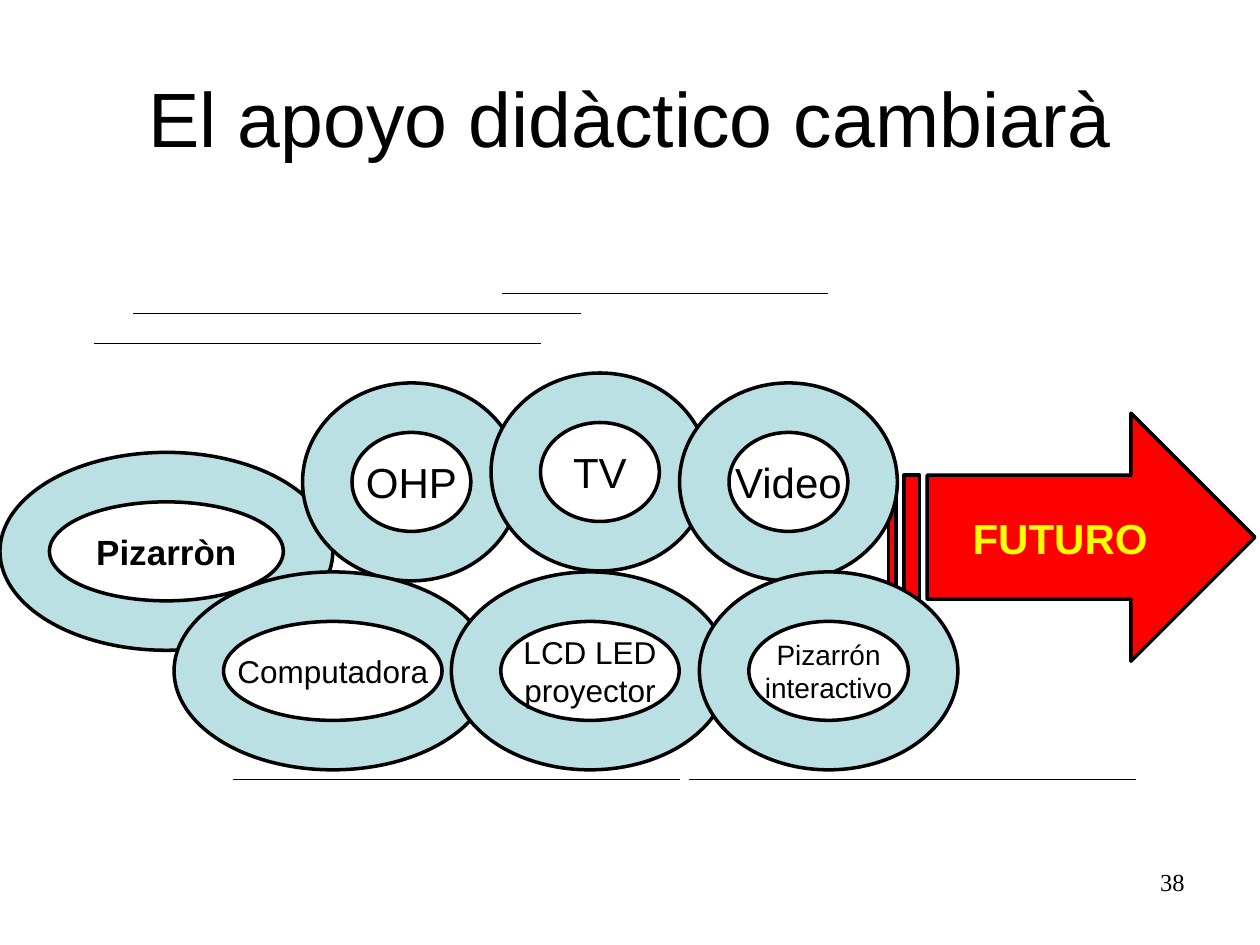
import pptx
import pptx.util
import pptx.dml.color
import pptx.enum.shapes
import pptx.enum.text
import pptx.oxml
import pptx.oxml.ns

Cm = pptx.util.Cm
Pt = pptx.util.Pt
SHAPES = pptx.enum.shapes.MSO_SHAPE
ALIGN = pptx.enum.text.PP_ALIGN
ANCHOR = pptx.enum.text.MSO_ANCHOR

COLORS = {"ink": "000000", "ring": "BBE0E3", "arrow": "FF0000", "future": "FFFF00"}


class Slide:
    """Holds the slide style and adds elements to one page; lengths in cm."""

    font = "Arial"
    outline = 2
    rule = 0.75

    def __init__(self, page):
        self.page = page

    def color(self, name):
        return pptx.dml.color.RGBColor.from_string(COLORS[name])

    def add_text(self, box, text, size, align=ALIGN.CENTER, anchor=ANCHOR.MIDDLE,
                 color="ink", bold=False, font=None):
        frame = box.text_frame
        frame.word_wrap = True
        frame.vertical_anchor = anchor
        para = frame.paragraphs[0]
        para.alignment = align
        span = para.add_run()
        span.text = text
        span.font.name = font or self.font
        span.font.size = Pt(size)
        span.font.bold = bold
        span.font.color.rgb = self.color(color)

    def title(self, text, left, top, width, height):
        box = self.page.shapes.title
        box.left, box.top, box.width, box.height = map(Cm, (left, top, width, height))
        self.add_text(box, text, 44)

    def label(self, text, left, top, width, height, size, **style):
        box = self.page.shapes.add_textbox(*map(Cm, (left, top, width, height)))
        self.add_text(box, text, size, **style)

    def shape(self, kind, fill, text, left, top, width, height, size, **style):
        box = self.page.shapes.add_shape(kind, *map(Cm, (left, top, width, height)))
        box.shadow.inherit = False
        box.fill.solid()
        box.fill.fore_color.rgb = self.color(fill)
        box.line.color.rgb = self.color("ink")
        box.line.width = Pt(self.outline)
        self.add_text(box, text, size, **style)

    def ring(self, text, left, top, width, size, **style):
        self.shape(SHAPES.DONUT, "ring", text, left, top, width, 3.99, size, **style)

    def line(self, left, top, length):
        line = self.page.shapes.add_connector(
            pptx.enum.shapes.MSO_CONNECTOR.STRAIGHT,
            Cm(left + length), Cm(top), Cm(left), Cm(top))
        line.line.color.rgb = self.color("ink")
        line.line.width = Pt(self.rule)
        properties = line._element.spPr
        properties.append(pptx.oxml.parse_xml(
            "<a:effectLst %s/>" % pptx.oxml.ns.nsdecls("a")))


def main():
    deck = pptx.Presentation()
    deck.slide_width, deck.slide_height = Cm(25.4), Cm(19.05)
    slide = Slide(deck.slides.add_slide(deck.slide_layouts[5]))

    # Arrow to the future, behind the rings
    slide.shape(SHAPES.STRIPED_RIGHT_ARROW, "arrow", "FUTURO",
                17.91, 8.33, 7.39, 5, 24, color="future", bold=True)

    # Title and page number
    slide.title("El apoyo didàctico cambiarà", 1.27, 0.76, 22.86, 3.18)
    slide.label("38", 18.21, 17.35, 5.92, 1.32, 14, align=ALIGN.RIGHT,
                anchor=ANCHOR.TOP, font="Times New Roman")

    # Upper chain of rings
    slide.ring("Pizarròn", 0, 9.12, 6.71, 20, bold=True)
    for index, (text, top) in enumerate([("OHP", 7.72), ("TV", 7.52), ("Video", 7.72)]):
        slide.ring(text, 6.1 + 3.8 * index, top, 4.39, 24)

    # Lower chain of rings
    for text, left, width, size in [("Computadora", 3.51, 6.4, 18),
                                    ("LCD LED proyector", 9.1, 5.59, 18),
                                    ("Pizarrón interactivo", 14.1, 5.21, 16)]:
        slide.ring(text, left, 11.53, width, size)

    # Rules above and below the chains
    for left, top, length in [(13.89, 15.72, 9.02), (2.69, 6.32, 9.02),
                              (4.7, 15.72, 9), (10.11, 5.92, 6.58),
                              (1.9, 6.93, 9)]:
        slide.line(left, top, length)

    deck.save("out.pptx")


if __name__ == "__main__":
    main()
